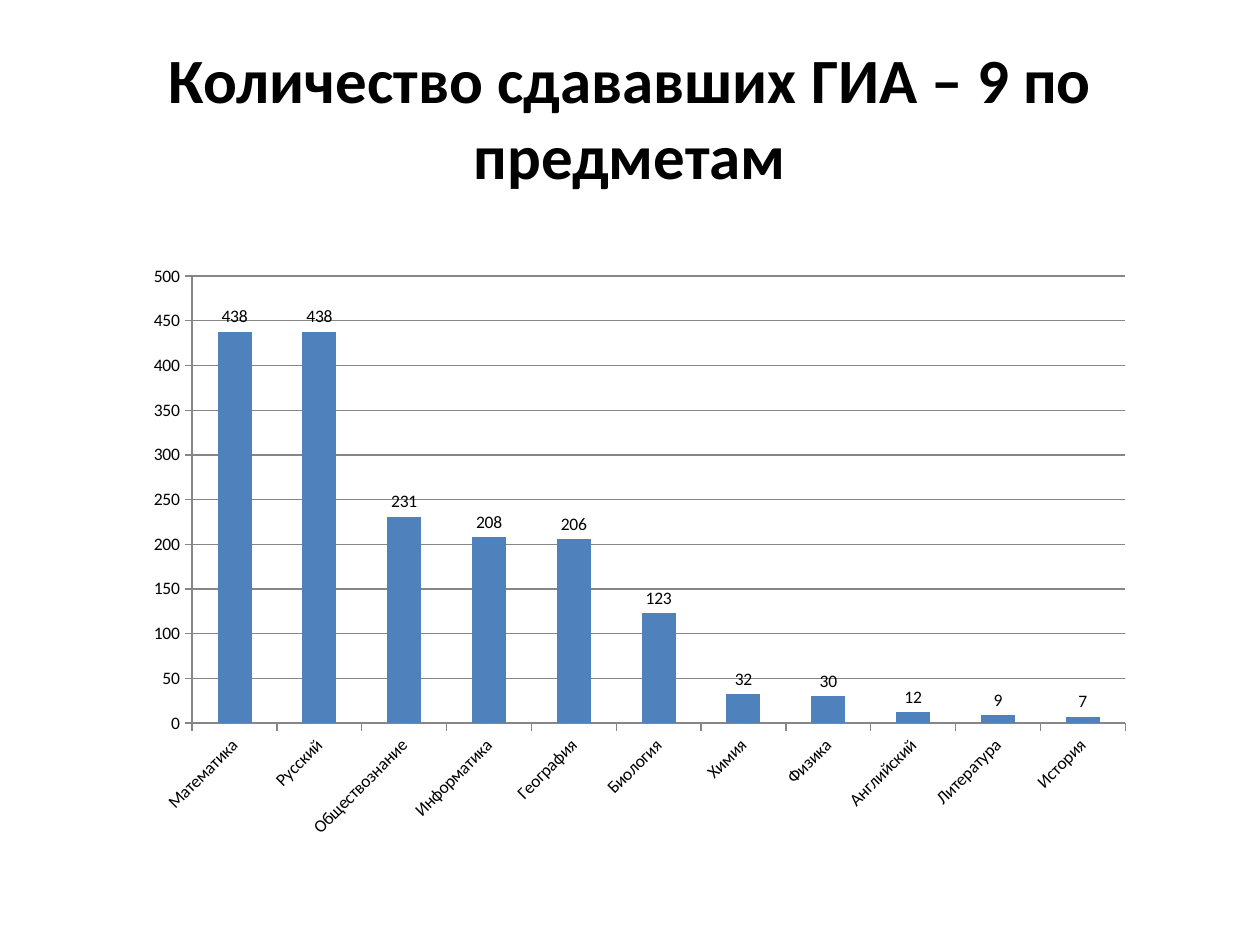
from pptx import Presentation
from pptx.chart.data import CategoryChartData
from pptx.dml.color import RGBColor
from pptx.enum.chart import XL_CHART_TYPE, XL_LABEL_POSITION, XL_TICK_MARK
from pptx.enum.text import MSO_ANCHOR, PP_ALIGN
from pptx.util import Pt

COLUMNS = XL_CHART_TYPE.COLUMN_CLUSTERED
LABEL_ABOVE = XL_LABEL_POSITION.OUTSIDE_END
TICK_OUTSIDE = XL_TICK_MARK.OUTSIDE
MIDDLE = MSO_ANCHOR.MIDDLE
CENTER = PP_ALIGN.CENTER

BLACK = RGBColor(0x00, 0x00, 0x00)
BLUE = RGBColor(0x4F, 0x81, 0xBD)
GRAY = RGBColor(0x86, 0x86, 0x86)
FONT = "Calibri"
TITLE_ONLY = 5

TITLE = "Количество сдававших ГИА – 9 по предметам"
PARTICIPANTS = {
    "Математика": 438,
    "Русский": 438,
    "Обществознание": 231,
    "Информатика": 208,
    "География": 206,
    "Биология": 123,
    "Химия": 32,
    "Физика": 30,
    "Английский": 12,
    "Литература": 9,
    "История": 7,
}


def format_font(font, size, bold=False):
    font.name = FONT
    font.size = Pt(size)
    font.bold = bold
    font.color.rgb = BLACK


def set_title(s, text):
    title = s.shapes.title
    title.left, title.top = Pt(36), Pt(21.6)
    title.width, title.height = Pt(648), Pt(90)
    tf = title.text_frame
    tf.text = text
    tf.word_wrap = True
    tf.vertical_anchor = MIDDLE
    p = tf.paragraphs[0]
    p.alignment = CENTER
    format_font(p.font, 36, bold=True)


def format_axis(axis):
    axis.major_tick_mark = TICK_OUTSIDE
    axis.format.line.color.rgb = GRAY
    axis.format.line.width = Pt(0.75)


def add_column_chart(s, values):
    data = CategoryChartData()
    data.categories = list(values)
    data.add_series("Series 1", list(values.values()))
    chart = s.shapes.add_chart(
        COLUMNS, Pt(76.3), Pt(145.4), Pt(578.2), Pt(339.8), data
    ).chart
    chart.has_legend = False
    chart.has_title = False
    format_font(chart.font, 10)

    format_axis(chart.category_axis)
    value_axis = chart.value_axis
    format_axis(value_axis)
    value_axis.minimum_scale = 0
    value_axis.maximum_scale = 500
    value_axis.major_unit = 50
    value_axis.has_major_gridlines = True
    grid_line = value_axis.major_gridlines.format.line
    grid_line.color.rgb = GRAY
    grid_line.width = Pt(0.75)

    plot = chart.plots[0]
    plot.gap_width = 150
    plot.vary_by_categories = False
    fill = plot.series[0].format.fill
    fill.solid()
    fill.fore_color.rgb = BLUE
    plot.has_data_labels = True
    labels = plot.data_labels
    labels.show_value = True
    labels.position = LABEL_ABOVE
    format_font(labels.font, 10)


def main():
    prs = Presentation()
    prs.slide_width, prs.slide_height = Pt(720), Pt(540)
    s = prs.slides.add_slide(prs.slide_layouts[TITLE_ONLY])
    set_title(s, TITLE)
    add_column_chart(s, PARTICIPANTS)
    prs.save("out.pptx")


if __name__ == "__main__":
    main()
